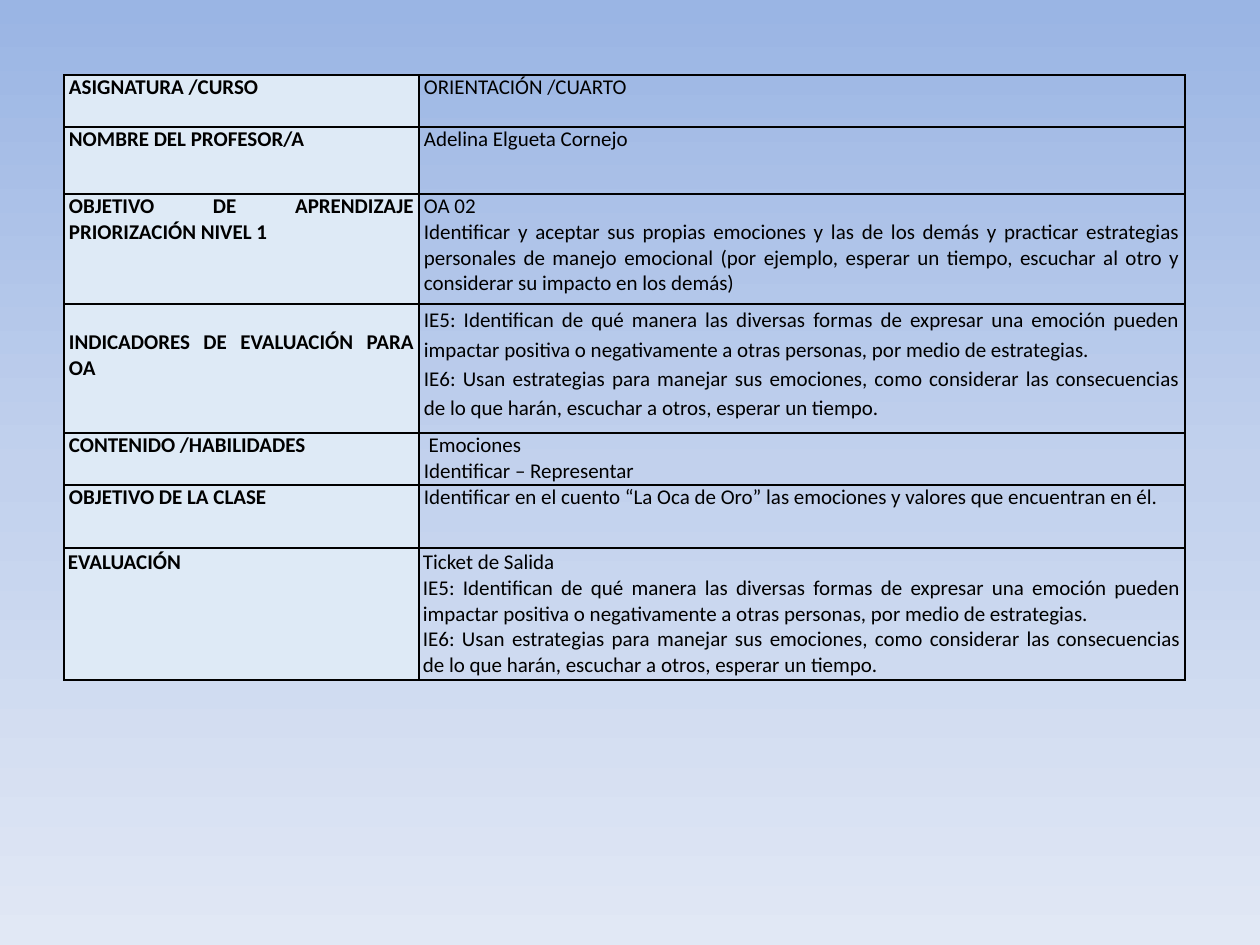
import pptx
import pptx.dml.color
import pptx.enum.text
import pptx.oxml
import pptx.oxml.ns
import pptx.util

SCALE = 914400 / 126
COLORS = {"text": "000000", "border": "000000", "label": "DEEAF6"}
BACKGROUND = [(0, "9AB5E4"), (50, "C2D1ED"), (100, "E1E8F5")]
NAMESPACE = pptx.oxml.ns.nsdecls("a")

INDICATORS = [
    "IE5: Identifican de qué manera las diversas formas de expresar una emoción pueden "
    "impactar positiva o negativamente a otras personas, por medio de estrategias.",
    "IE6: Usan estrategias para manejar sus emociones, como considerar las consecuencias "
    "de lo que harán, escuchar a otros, esperar un tiempo.",
]
ROWS = [
    {"height": 52, "label": "ASIGNATURA /CURSO", "lines": ["ORIENTACIÓN /CUARTO"]},
    {"height": 67, "label": "NOMBRE DEL PROFESOR/A", "lines": ["Adelina Elgueta Cornejo"]},
    {"height": 110, "label": "OBJETIVO DE APRENDIZAJE PRIORIZACIÓN NIVEL 1", "lines": [
        "OA 02",
        "Identificar y aceptar sus propias emociones y las de los demás y practicar "
        "estrategias personales de manejo emocional (por ejemplo, esperar un tiempo, "
        "escuchar al otro y considerar su impacto en los demás)",
    ]},
    {"height": 129, "label": "INDICADORES DE EVALUACIÓN PARA OA", "lines": INDICATORS,
     "label_top": 26, "spacing": 1.15},
    {"height": 52, "label": "CONTENIDO /HABILIDADES",
     "lines": [" Emociones", "Identificar – Representar"]},
    {"height": 63, "label": "OBJETIVO DE LA CLASE", "lines": [
        "Identificar en el cuento “La Oca de Oro” las emociones y valores que encuentran en él.",
    ]},
    {"height": 132, "label": "EVALUACIÓN", "lines": ["Ticket de Salida", *INDICATORS],
     "side": 4, "top": 2},
]
COLUMNS = [355, 766]
LEFT, TOP = 64, 75


def px(value):
    return pptx.util.Emu(round(value * SCALE))


def set_attributes(target, values):
    for name, value in values.items():
        setattr(target, name, value)


def set_background(slide):
    fill = slide.background.fill
    fill.gradient()
    fill.gradient_angle = 270
    stops = slide.element.find(".//" + pptx.oxml.ns.qn("a:gsLst"))
    for stop in list(stops):
        stops.remove(stop)
    for position, color in BACKGROUND:
        stops.append(pptx.oxml.parse_xml(
            f'<a:gs {NAMESPACE} pos="{position * 1000}"><a:srgbClr val="{color}"/></a:gs>'))


def add_borders(cell):
    properties = cell._tc.get_or_add_tcPr()
    for index, side in enumerate(("lnL", "lnR", "lnT", "lnB")):
        properties.insert(index, pptx.oxml.parse_xml(
            f'<a:{side} {NAMESPACE} w="12700"><a:solidFill>'
            f'<a:srgbClr val="{COLORS["border"]}"/></a:solidFill></a:{side}>'))


def fill_cell(cell, lines, bold, top, row):
    side, bottom = px(row.get("side", 5)), px(row.get("top", 0))
    set_attributes(cell, {"margin_left": side, "margin_right": side,
                          "margin_top": px(top), "margin_bottom": bottom})
    cell.text = "\n".join(lines)
    for paragraph in cell.text_frame.paragraphs:
        set_attributes(paragraph, {"alignment": pptx.enum.text.PP_ALIGN.JUSTIFY,
                                   "line_spacing": 1.0 if bold else row.get("spacing", 1.0)})
        for run in paragraph.runs:
            set_attributes(run.font, {"name": "Calibri", "size": pptx.util.Pt(12), "bold": bold})
            run.font.color.rgb = pptx.dml.color.RGBColor.from_string(COLORS["text"])
    if bold:
        cell.fill.solid()
        cell.fill.fore_color.rgb = pptx.dml.color.RGBColor.from_string(COLORS["label"])
    else:
        cell.fill.background()
    add_borders(cell)


def add_plan_table(slide):
    table = slide.shapes.add_table(
        len(ROWS), len(COLUMNS), px(LEFT), px(TOP),
        px(sum(COLUMNS)), px(sum(row["height"] for row in ROWS))).table
    set_attributes(table, {"first_row": False, "horz_banding": False})
    for column, width in zip(table.columns, COLUMNS):
        column.width = px(width)
    for index, row in enumerate(ROWS):
        table.rows[index].height = px(row["height"])
        top = row.get("top", 0)
        fill_cell(table.cell(index, 0), [row["label"]], True, row.get("label_top", top), row)
        fill_cell(table.cell(index, 1), row["lines"], False, top, row)


def main():
    presentation = pptx.Presentation()
    set_attributes(presentation, {"slide_width": px(1260), "slide_height": px(945)})
    slide = presentation.slides.add_slide(presentation.slide_layouts[6])
    set_background(slide)
    add_plan_table(slide)
    presentation.save("out.pptx")


if __name__ == "__main__":
    main()
